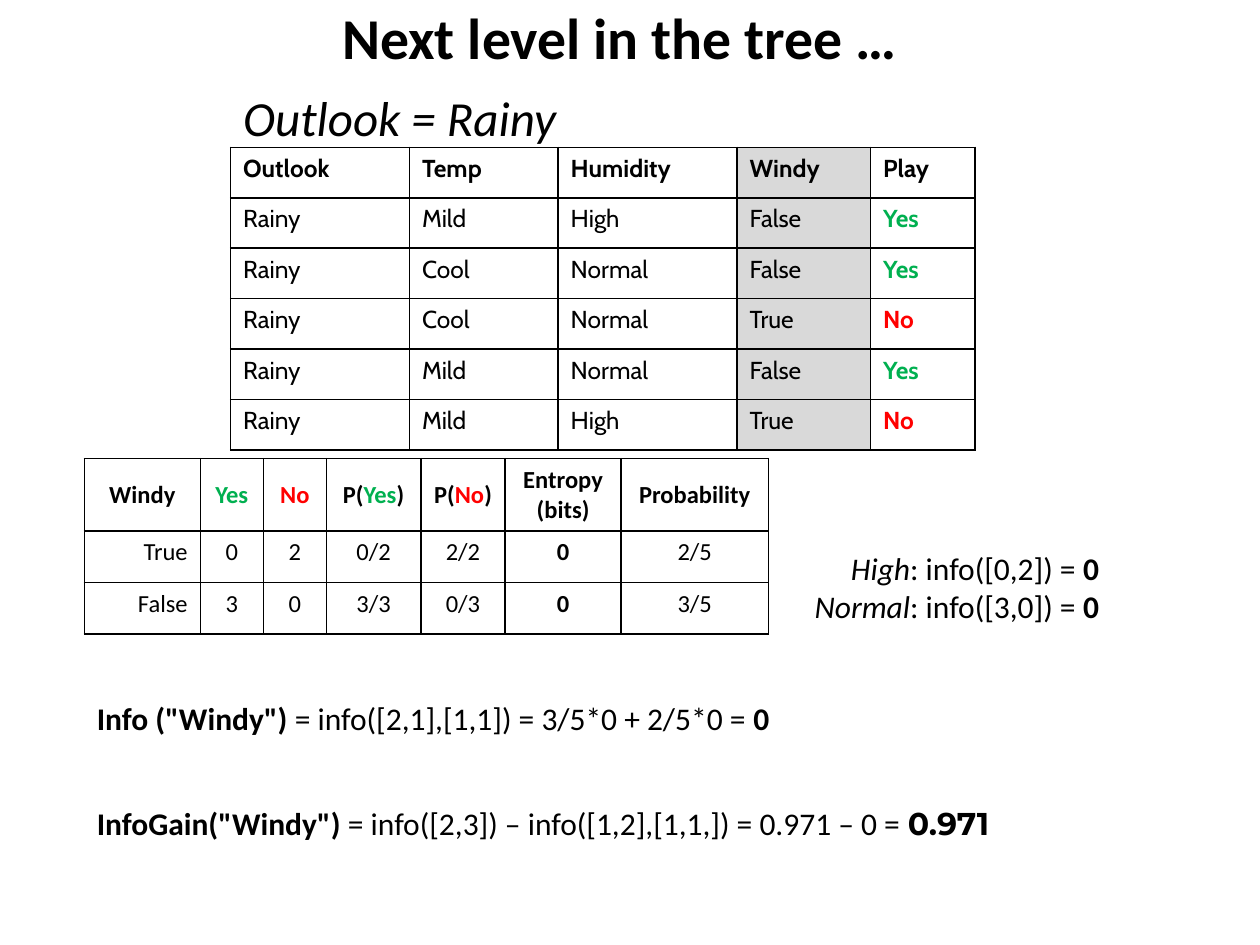
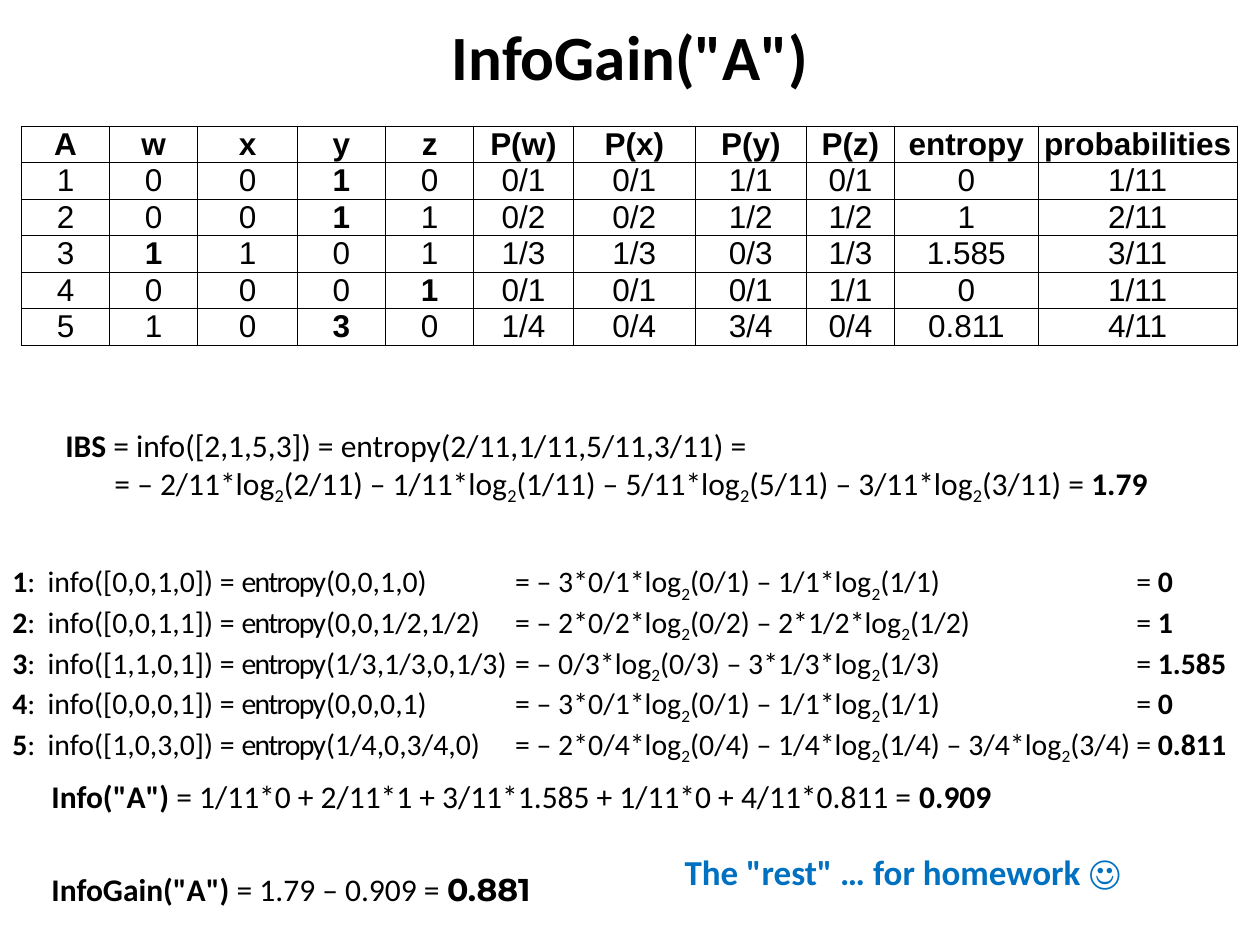
from dataclasses import dataclass
from typing import NamedTuple, Optional, Union

from lxml import etree
from pptx import Presentation
from pptx.dml.color import RGBColor
from pptx.enum.text import MSO_ANCHOR, MSO_AUTO_SIZE, PP_ALIGN
from pptx.oxml.ns import qn
from pptx.util import Inches, Pt

BLACK = RGBColor(0x00, 0x00, 0x00)
GREEN = RGBColor(0x00, 0xB0, 0x50)
RED = RGBColor(0xFF, 0x00, 0x00)
BLUE = RGBColor(0x00, 0x70, 0xC0)
GREY = RGBColor(0xD9, 0xD9, 0xD9)

LEFT, CENTER, RIGHT = PP_ALIGN.LEFT, PP_ALIGN.CENTER, PP_ALIGN.RIGHT
TOP, MIDDLE = MSO_ANCHOR.TOP, MSO_ANCHOR.MIDDLE
FIT_SHAPE, NO_FIT = MSO_AUTO_SIZE.SHAPE_TO_FIT_TEXT, MSO_AUTO_SIZE.NONE

TITLE_ONLY = 5
BODY_FONT, RESULT_FONT = "Calibri", "Montserrat"
SUBSCRIPT_MARK = "_2"


class Span(NamedTuple):
    text: str
    bold: bool = False
    italic: bool = False
    color: Optional[RGBColor] = None
    font: Optional[str] = None
    spacing: int = 0


Content = Union[str, Span, tuple]


class Area(NamedTuple):
    left: float
    top: float
    width: float
    height: float


@dataclass(frozen=True)
class TextStyle:
    size: float = 18
    font: str = BODY_FONT
    color: RGBColor = BLACK
    bold: bool = False
    italic: bool = False
    align: PP_ALIGN = LEFT


@dataclass(frozen=True)
class Paragraph:
    content: Content
    indent: float = 0
    tabs: tuple = ()


@dataclass(frozen=True)
class TextBox:
    area: Area
    paragraphs: tuple
    style: TextStyle = TextStyle()


@dataclass(frozen=True)
class Grid:
    left: float
    top: float
    widths: tuple
    header_height: float
    row_height: float
    rows: tuple
    size: float
    font: str
    border: float
    align: PP_ALIGN = CENTER
    row_label_align: PP_ALIGN = CENTER
    header_anchor: MSO_ANCHOR = MIDDLE
    body_anchor: MSO_ANCHOR = MIDDLE
    shaded_column: Optional[int] = None
    margins: bool = True


def bold(text: str) -> Span:
    return Span(text, bold=True)


def italic(text: str) -> Span:
    return Span(text, italic=True)


def result(text: str) -> Span:
    return Span(text, bold=True, font=RESULT_FONT)


YES = Span("Yes", bold=True, color=GREEN)
NO = Span("No", bold=True, color=RED)


# Text
def add_run(para, span: Span, text: str, subscript: bool = False) -> None:
    run = para.add_run()
    run.text = text
    if span.bold:
        run.font.bold = True
    if span.italic:
        run.font.italic = True
    if span.color is not None:
        run.font.color.rgb = span.color
    if span.font:
        run.font.name = span.font
    properties = run._r.get_or_add_rPr()
    if span.spacing:
        properties.set("spc", str(span.spacing * 100))
    if subscript:
        properties.set("baseline", "-25000")


def write_span(para, span: Span) -> None:
    for line_number, line in enumerate(span.text.split("\n")):
        if line_number:
            para.add_line_break()
        for part_number, part in enumerate(line.split(SUBSCRIPT_MARK)):
            if part_number:
                add_run(para, span, SUBSCRIPT_MARK[1:], subscript=True)
            if part:
                add_run(para, span, part)


def write_paragraph(para, content: Content, style: TextStyle) -> None:
    para.alignment = style.align
    font = para.font
    font.name, font.size = style.font, Pt(style.size)
    font.bold, font.italic = style.bold, style.italic
    font.color.rgb = style.color
    spans = content if type(content) is tuple else (content,)
    for span in spans:
        write_span(para, span if isinstance(span, Span) else Span(span))


def set_layout(para, indent: float, tabs: tuple) -> None:
    properties = para._p.get_or_add_pPr()
    if indent:
        properties.set("marL", str(Inches(indent)))
    if tabs:
        tab_list = etree.Element(qn("a:tabLst"))
        for position in tabs:
            etree.SubElement(tab_list, qn("a:tab"), pos=str(Inches(position)), algn="l")
        properties.find(qn("a:defRPr")).addprevious(tab_list)


def write_heading(shape, area: Area, text: str, style: TextStyle) -> None:
    shape.left, shape.top, shape.width, shape.height = map(Inches, area)
    frame = shape.text_frame
    frame.word_wrap, frame.auto_size = True, NO_FIT
    frame.vertical_anchor = MIDDLE
    write_paragraph(frame.paragraphs[0], text, style)


def draw_text(page, box: TextBox) -> None:
    frame = page.shapes.add_textbox(*map(Inches, box.area)).text_frame
    frame.word_wrap, frame.auto_size = True, FIT_SHAPE
    for number, item in enumerate(box.paragraphs):
        para = frame.add_paragraph() if number else frame.paragraphs[0]
        write_paragraph(para, item.content, box.style)
        set_layout(para, item.indent, item.tabs)


# Tables
def set_borders(cell, width: float) -> None:
    properties = cell._tc.get_or_add_tcPr()
    for position, side in enumerate(("lnL", "lnR", "lnT", "lnB")):
        line = etree.Element(qn(f"a:{side}"), w=str(Pt(width)))
        fill = etree.SubElement(line, qn("a:solidFill"))
        etree.SubElement(fill, qn("a:srgbClr"), val=str(BLACK))
        properties.insert(position, line)


def draw_grid(page, grid: Grid) -> None:
    heights = [grid.header_height] + [grid.row_height] * (len(grid.rows) - 1)
    area = Area(grid.left, grid.top, sum(grid.widths), sum(heights))
    table = page.shapes.add_table(len(heights), len(grid.widths), *map(Inches, area)).table
    table.first_row = table.horz_banding = False
    for column, width in zip(table.columns, grid.widths):
        column.width = Inches(width)
    for row, height in zip(table.rows, heights):
        row.height = Inches(height)
    for row_number, row in enumerate(grid.rows):
        header = row_number == 0
        for column_number, content in enumerate(row):
            cell = table.cell(row_number, column_number)
            row_label = column_number == 0 and not header
            align = grid.row_label_align if row_label else grid.align
            style = TextStyle(grid.size, grid.font, bold=header, align=align)
            write_paragraph(cell.text_frame.paragraphs[0], content, style)
            cell.vertical_anchor = grid.header_anchor if header else grid.body_anchor
            if not grid.margins:
                cell.margin_left = cell.margin_right = 0
                cell.margin_top = cell.margin_bottom = 0
            if column_number == grid.shaded_column:
                cell.fill.solid()
                cell.fill.fore_color.rgb = GREY
            else:
                cell.fill.background()
            set_borders(cell, grid.border)


# Slide 1: the rainy branch
RAINY_GRID = Grid(
    1.83, 1.17, (1.42, 1.18, 1.42, 1.06, 0.83), 0.4, 0.4,
    (("Outlook", "Temp", "Humidity", "Windy", "Play"),
     ("Rainy", "Mild", "High", "False", YES),
     ("Rainy", "Cool", "Normal", "False", YES),
     ("Rainy", "Cool", "Normal", "True", NO),
     ("Rainy", "Mild", "Normal", "False", YES),
     ("Rainy", "Mild", "High", "True", NO)),
    size=14, font="Cabin", border=1, align=LEFT, row_label_align=LEFT,
    header_anchor=TOP, body_anchor=TOP, shaded_column=3)

WINDY_GRID = Grid(
    0.67, 3.64, (0.92, 0.5, 0.5, 0.75, 0.67, 0.92, 1.17), 0.57, 0.41,
    (("Windy", YES, NO, ("P(", YES, ")"), ("P(", NO, ")"), "Entropy\n(bits)", "Probability"),
     ("True", "0", "2", "0/2", "2/2", bold("0"), "2/5"),
     ("False", "3", "0", "3/3", "0/3", bold("0"), "3/5")),
    size=14, font=BODY_FONT, border=1, row_label_align=RIGHT, body_anchor=TOP)

RAINY_TEXTS = (
    TextBox(Area(0.67, 5.5, 5.6, 0.4), (Paragraph(
        (bold('Info ("Windy")'), " = info([2,1],[1,1]) = 3/5*0 + 2/5*0 = ", bold("0"))),)),
    TextBox(Area(0.67, 6.33, 7.47, 0.4), (Paragraph(
        (bold('InfoGain("Windy")'), " = info([2,3]) – info([1,2],[1,1,]) = 0.971 – 0 = ",
         result("0.971"))),)),
    TextBox(Area(6.27, 4.31, 2.55, 0.71), (
        Paragraph((italic("High"), ": info([0,2]) = ", bold("0"))),
        Paragraph((italic("Normal"), ": info([3,0]) = ", bold("0")))), TextStyle(align=RIGHT)),
)

# Slide 2: the gain of attribute A
GAIN_GRID = Grid(
    0.17, 1, (0.7, 0.7, 0.79, 0.7, 0.7, 0.79, 0.97, 0.88, 0.7, 1.14, 1.58), 0.29, 0.29,
    (("A", "w", "x", "y", "z", "P(w)", "P(x)", "P(y)", "P(z)", "entropy", "probabilities"),
     ("1", "0", "0", bold("1"), "0", "0/1", "0/1", "1/1", "0/1", "0", "1/11"),
     ("2", "0", "0", bold("1"), "1", "0/2", "0/2", "1/2", "1/2", "1", "2/11"),
     ("3", bold("1"), "1", "0", "1", "1/3", "1/3", "0/3", "1/3", "1.585", "3/11"),
     ("4", "0", "0", "0", bold("1"), "0/1", "0/1", "0/1", "1/1", "0", "1/11"),
     ("5", "1", "0", bold("3"), "0", "1/4", "0/4", "3/4", "0/4", "0.811", "4/11")),
    size=18, font="Arial", border=0.5, margins=False)

ENTROPY_TABS = (0.28, 3.99, 8.92)
ENTROPY_ROWS = (
    ("0,0,1,0", "0,0,1,0", "3*0/1*log_2(0/1) – 1/1*log_2(1/1)", "0"),
    ("0,0,1,1", "0,0,1/2,1/2", "2*0/2*log_2(0/2) – 2*1/2*log_2(1/2)", "1"),
    ("1,1,0,1", "1/3,1/3,0,1/3", "0/3*log_2(0/3) – 3*1/3*log_2(1/3)", "1.585"),
    ("0,0,0,1", "0,0,0,1", "3*0/1*log_2(0/1) – 1/1*log_2(1/1)", "0"),
    ("1,0,3,0", "1/4,0,3/4,0", "2*0/4*log_2(0/4) – 1/4*log_2(1/4) – 3/4*log_2(3/4)", "0.811"),
)
ENTROPY_LINES = tuple(
    Paragraph((bold(str(number)), f":\tinfo([{counts}]) = ", Span("entropy", spacing=-1),
               f"({shares})\t= – {terms}\t= ", bold(value)), tabs=ENTROPY_TABS)
    for number, (counts, shares, terms, value) in enumerate(ENTROPY_ROWS, start=1))

GAIN_TEXTS = (
    TextBox(Area(0.42, 3.33, 9.08, 0.71), (
        Paragraph((bold("IBS"), " = info([2,1,5,3]) = entropy(2/11,1/11,5/11,3/11) =")),
        Paragraph(("= – 2/11*log_2(2/11) – 1/11*log_2(1/11) – 5/11*log_2(5/11)"
                   " – 3/11*log_2(3/11) = ", bold("1.79")), indent=0.39))),
    TextBox(Area(0, 4.42, 10, 1.53), ENTROPY_LINES, TextStyle(17)),
    TextBox(Area(0.31, 6.12, 7.81, 0.4), (Paragraph(
        (bold('Info("A")'), " = 1/11*0 + 2/11*1 + 3/11*1.585 + 1/11*0 + 4/11*0.811 = ",
         bold("0.909"))),)),
    TextBox(Area(0.31, 6.86, 4.19, 0.4), (Paragraph(
        (bold('InfoGain("A")'), " = 1.79 – 0.909 = ", result("0.881"))),)),
    TextBox(Area(4.83, 6.7, 4.67, 0.44), (Paragraph('The "rest" … for homework ☺'),),
            TextStyle(20, color=BLUE, bold=True, align=CENTER)),
)


def add_page(deck, area: Area, title: str, style: TextStyle, grids: tuple, texts: tuple):
    page = deck.slides.add_slide(deck.slide_layouts[TITLE_ONLY])
    write_heading(page.shapes.title, area, title, style)
    for grid in grids:
        draw_grid(page, grid)
    for box in texts:
        draw_text(page, box)
    return page


def main() -> None:
    deck = Presentation()
    deck.slide_width, deck.slide_height = Inches(10), Inches(7.5)

    rainy_page = add_page(deck, Area(1.83, 0.72, 3.35, 0.42), "Outlook = Rainy",
                          TextStyle(28, italic=True), (RAINY_GRID, WINDY_GRID), RAINY_TEXTS)
    heading_area = Area(0.42, 0, 9, 0.58)
    heading = rainy_page.shapes.add_textbox(*map(Inches, heading_area))
    write_heading(heading, heading_area, "Next level in the tree …",
                  TextStyle(33, bold=True, align=CENTER))

    add_page(deck, Area(0.5, 0.08, 9, 0.72), 'InfoGain("A")',
             TextStyle(36, bold=True, align=CENTER), (GAIN_GRID,), GAIN_TEXTS)
    deck.save("out.pptx")


if __name__ == "__main__":
    main()
